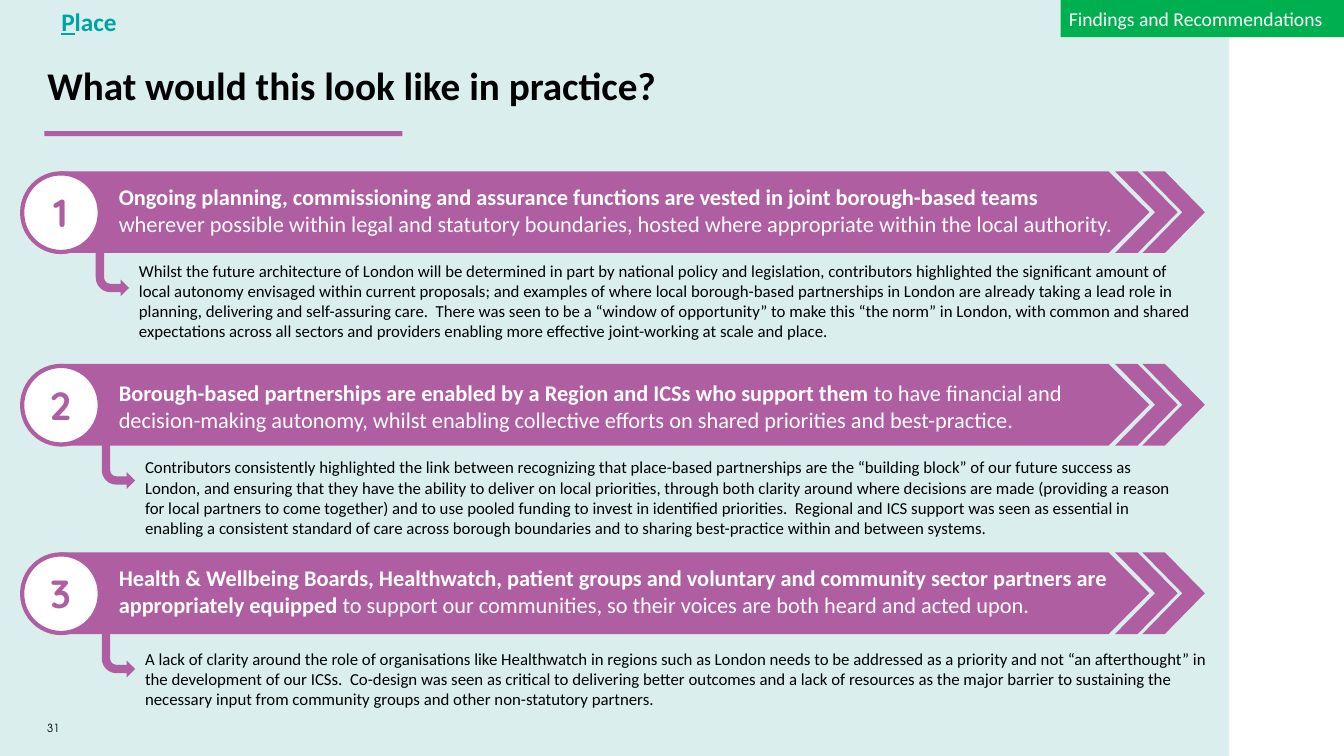
import pptx
import pptx.util
import pptx.dml.color
import pptx.enum.shapes
import pptx.enum.text

RGB = pptx.dml.color.RGBColor
KIND = pptx.enum.shapes.MSO_SHAPE
ALIGN = pptx.enum.text.PP_ALIGN
ANCHOR = pptx.enum.text.MSO_ANCHOR

# Content: each head is a list of paragraphs, each paragraph a list of (words, bold)
TITLE = "What would this look like in practice?"
BANNER = "Findings and Recommendations"
PAGE = "31"
STEPS = [
    {
        "top": 170, "head": (177, 1045), "note": (128, 253, 1066, 91),
        "lines": [
            [("Ongoing planning, commissioning and assurance functions are vested in joint borough-based teams", True)],
            [("wherever possible within legal and statutory boundaries, hosted where appropriate within the local authority.", False)],
        ],
        "text": "Whilst the future architecture of London will be determined in part by national policy and legislation, "
                "contributors highlighted the significant amount of local autonomy envisaged within current proposals; "
                "and examples of where local borough-based partnerships in London are already taking a lead role in "
                "planning, delivering and self-assuring care.  There was seen to be a “window of opportunity” to make "
                "this “the norm” in London, with common and shared expectations across all sectors and providers "
                "enabling more effective joint-working at scale and place.",
    },
    {
        "top": 361, "head": (371, 997), "note": (134, 448, 1053, 91),
        "lines": [
            [("Borough-based partnerships are enabled by a Region and ICSs who support them ", True),
             ("to have financial and decision-making autonomy, whilst enabling collective efforts on shared "
              "priorities and best-practice.", False)],
        ],
        "text": "Contributors consistently highlighted the link between recognizing that place-based partnerships are "
                "the “building block” of our future success as London, and ensuring that they have the ability to "
                "deliver on local priorities, through both clarity around where decisions are made (providing a reason "
                "for local partners to come together) and to use pooled funding to invest in identified priorities.  "
                "Regional and ICS support was seen as essential in enabling a consistent standard of care across "
                "borough boundaries and to sharing best-practice within and between systems.",
    },
    {
        "top": 548, "head": (555, 1004), "note": (134, 638, 1081, 71),
        "lines": [
            [("Health & Wellbeing Boards, Healthwatch, patient groups and voluntary and community sector partners "
              "are appropriately equipped ", True),
             ("to support our communities, so their voices are both heard and acted upon.", False)],
        ],
        "text": "A lack of clarity around the role of organisations like Healthwatch in regions such as London needs to "
                "be addressed as a priority and not “an afterthought” in the development of our ICSs.  Co-design was "
                "seen as critical to delivering better outcomes and a lack of resources as the major barrier to "
                "sustaining the necessary input from community groups and other non-statutory partners.",
    },
]

PURPLE = RGB(0xAF, 0x5E, 0xA1)
MINT = RGB(0xDA, 0xEE, 0xEE)
TEAL = RGB(0x00, 0xA3, 0xA1)
GREEN = RGB(0x00, 0xB0, 0x50)
WHITE = RGB(0xFF, 0xFF, 0xFF)
BLACK = RGB(0x00, 0x00, 0x00)

SCALE = 9144  # 100 px to the inch


def px(*nums):
    return [num * SCALE for num in nums]


def shape(kind, box, fill):
    item = slide.shapes.add_shape(kind, *px(*box))
    item.shadow.inherit = False
    item.fill.solid()
    item.fill.fore_color.rgb = fill
    item.line.fill.background()
    return item


def add_run(para, words, size, color, bold=False, face="Calibri"):
    run = para.add_run()
    run.text = words
    run.font.size = pptx.util.Pt(size)
    run.font.name = face
    run.font.bold = bold
    run.font.color.rgb = color
    return run


def text_box(box, anchor=ANCHOR.TOP):
    frame = slide.shapes.add_textbox(*px(*box)).text_frame
    frame.word_wrap = True
    frame.vertical_anchor = anchor
    return frame


deck = pptx.Presentation()
deck.slide_width, deck.slide_height = px(1333, 750)
slide = deck.slides.add_slide(deck.slide_layouts[5])

# Backdrop, page number and title rule
shape(KIND.RECTANGLE, (0, 0, 1219, 750), MINT)
page = text_box((37, 713, 51, 19), ANCHOR.MIDDLE)
add_run(page.paragraphs[0], PAGE, 8, BLACK, face="TeX Gyre Adventor")
shape(KIND.RECTANGLE, (44, 130, 355, 5), PURPLE)

# Title
title = slide.shapes.title
title.left, title.top, title.width, title.height = px(37, 47, 1157, 81)
frame = title.text_frame
frame.auto_size = pptx.enum.text.MSO_AUTO_SIZE.NONE
frame.vertical_anchor = ANCHOR.MIDDLE
para = frame.paragraphs[0]
para.alignment = ALIGN.LEFT
para.line_spacing = 0.9
add_run(para, TITLE, 28, BLACK, True)
slide.shapes.element.append(title.element)  # in front of the backdrop

# Numbered steps
for num, step in enumerate(STEPS, 1):
    top = step["top"]
    shape(KIND.PENTAGON, (59, top, 1081, 81), PURPLE)
    for left in (1106, 1133):
        shape(KIND.CHEVRON, (left, top, 62, 81), PURPLE).adjustments[0] = 0.64

    head_top, width = step["head"]
    frame = text_box((108, head_top, width, 64))
    for row, line in enumerate(step["lines"]):
        para = frame.add_paragraph() if row else frame.paragraphs[0]
        for words, bold in line:
            add_run(para, words, 16, WHITE, bold)

    disc = shape(KIND.OVAL, (22, top + 2, 77, 78), WHITE)
    disc.line.color.rgb = PURPLE
    disc.line.width = pptx.util.Pt(3)
    para = text_box((33, top + 12, 54, 57)).paragraphs[0]
    para.alignment = ALIGN.CENTER
    add_run(para, str(num), 28, PURPLE, True, "Quicksand")

    note = step["note"]
    arrow = shape(KIND.BENT_ARROW, (note[0] - 33, top + 77, 33, 47), PURPLE)
    arrow.element.spPr.xfrm.set("flipV", "1")
    para = text_box(note, ANCHOR.MIDDLE).paragraphs[0]
    add_run(para, step["text"], 12, BLACK)

# Section label and corner banner
para = text_box((51, 1, 667, 40)).paragraphs[0]
add_run(para, "P", 18, TEAL, True).font.underline = True
add_run(para, "lace", 18, TEAL, True)

frame = shape(KIND.RECTANGLE, (1052, 0, 281, 37), GREEN).text_frame
frame.margin_left, frame.margin_right = px(8, 8)
frame.margin_top, frame.margin_bottom = px(5, 5)
frame.vertical_anchor = ANCHOR.MIDDLE
frame.paragraphs[0].alignment = ALIGN.LEFT
add_run(frame.paragraphs[0], BANNER, 14, WHITE)

deck.save("out.pptx")
